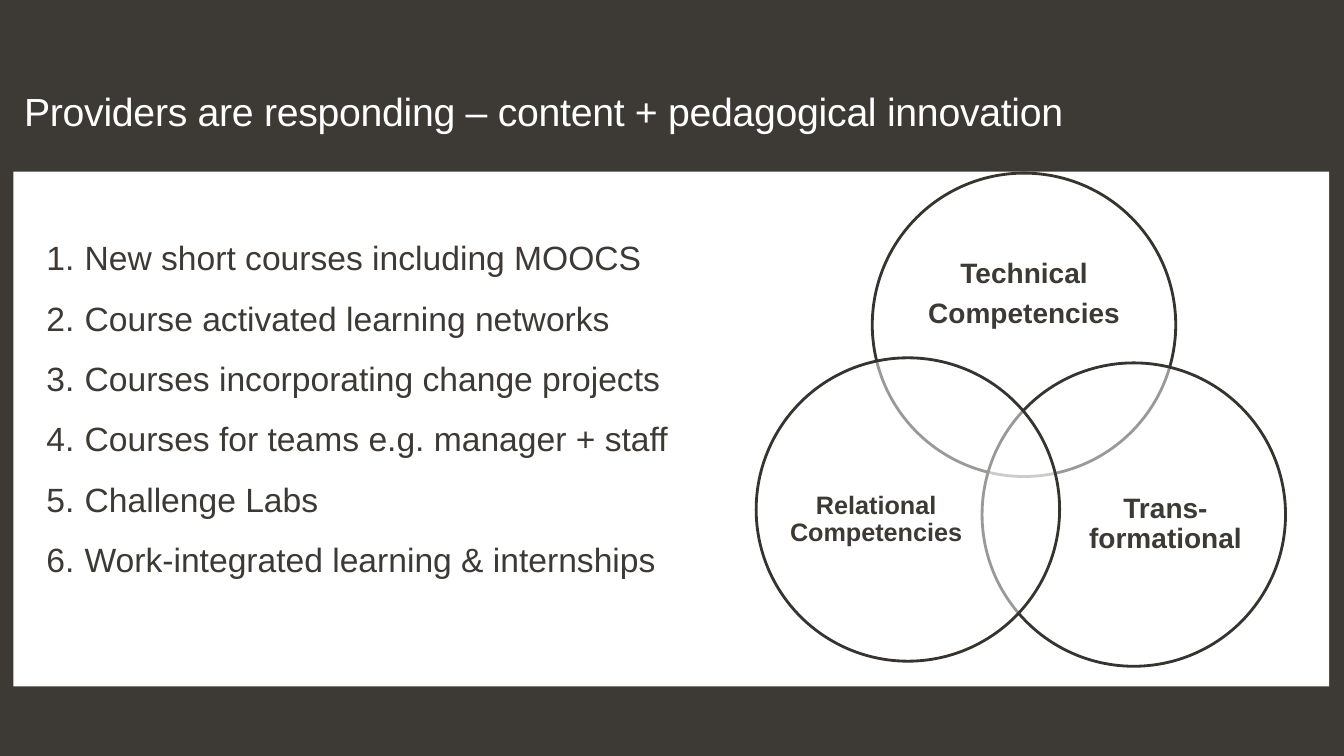
from dataclasses import dataclass

from lxml.etree import SubElement
from pptx import Presentation
from pptx.dml.color import RGBColor as Rgb
from pptx.enum.shapes import MSO_SHAPE as Kind
from pptx.enum.text import MSO_ANCHOR as Anchor, PP_ALIGN as Align
from pptx.oxml.ns import qn
from pptx.util import Inches, Pt


@dataclass(frozen=True)
class Theme:
    font: str = "Arial"
    dark: Rgb = Rgb(0x3D, 0x39, 0x35)
    ring: Rgb = Rgb(0x37, 0x34, 0x30)
    white: Rgb = Rgb(0xFF, 0xFF, 0xFF)
    title: int = 28
    body: int = 24
    label: int = 20
    small: int = 18


theme = Theme()
deck = Presentation()
deck.slide_width, deck.slide_height = Inches(13.33), Inches(7.5)
slide = deck.slides.add_slide(deck.slide_layouts[6])
slide.background.fill.solid()
slide.background.fill.fore_color.rgb = theme.dark


def area(left, top, width, height):
    """Turn percentages of the slide's size into lengths."""
    wide, high = deck.slide_width / 100, deck.slide_height / 100
    return [int(n) for n in (left * wide, top * high, width * wide, height * high)]


def add_text(home, box, text, size, color, lead, after=0, bold=False):
    """Add a text box without margins, one paragraph to a line of text."""
    frame = home.add_textbox(*area(*box)).text_frame
    frame.word_wrap = True
    frame.margin_left = frame.margin_right = frame.margin_top = frame.margin_bottom = 0
    frame.text = text
    for para in frame.paragraphs:
        para.line_spacing = lead
        para.space_after = Pt(after)
        font = para.runs[0].font
        font.name, font.size, font.bold = theme.font, Pt(size), bold
        font.color.rgb = color
    return frame


# Panel and title
panel = slide.shapes.add_shape(Kind.RECTANGLE, *area(1, 22.7, 97.9, 68.1))
panel.shadow.inherit = False
panel.fill.solid()
panel.fill.fore_color.rgb = theme.white
panel.line.fill.background()

title = add_text(slide.shapes, (1.8, 10.27, 90.5, 17.2),
                 "Providers are responding – content + pedagogical innovation",
                 theme.title, theme.white, 1.2, 3)
title.paragraphs[0].runs[0].font._element.set("spc", "-20")

# Venn diagram: circle corner, label box, label, type size
venn = slide.shapes.add_group_shape().shapes
rings = [
    ((64.9, 22.9), (67.9, 30, 16.6, 18), "Technical\nCompetencies", theme.label),
    ((73.07, 48), (79.97, 58.4, 13.5, 22), "Trans-formational", theme.label),
    ((56.26, 47.33), (58.44, 57.73, 13.5, 22), "Relational Competencies", theme.small),
]
for corner, box, label, size in rings:
    ring = venn.add_shape(Kind.OVAL, *area(*corner, 22.58, 40.13))
    ring.shadow.inherit = False
    ring.fill.solid()
    ring.fill.fore_color.rgb = theme.white
    tint = ring.fill._xPr.find(qn("a:solidFill"))[0]
    SubElement(tint, qn("a:alpha"), val="50000")
    ring.line.color.rgb = theme.ring
    ring.line.width = Pt(2)
    frame = add_text(venn, box, label, size, theme.dark, 0.9, 0.35 * size, True)
    frame.vertical_anchor = Anchor.MIDDLE
    for para in frame.paragraphs:
        para.alignment = Align.CENTER

# Numbered list
items = [
    "New short courses including MOOCS",
    "Course activated learning networks",
    "Courses incorporating change projects",
    "Courses for teams e.g. manager + staff",
    "Challenge Labs",
    "Work-integrated learning & internships",
]
points = add_text(slide.shapes, (3.45, 28.67, 47.94, 55.87), "\n".join(items),
                  theme.body, theme.dark, 1.5)
indent = Inches(0.38)
for para in points.paragraphs:
    props = para._p.get_or_add_pPr()
    props.set("marL", str(indent))
    props.set("indent", str(-indent))
    SubElement(props, qn("a:buFont"), typeface="+mj-lt")
    SubElement(props, qn("a:buAutoNum"), type="arabicPeriod")

deck.save("out.pptx")
